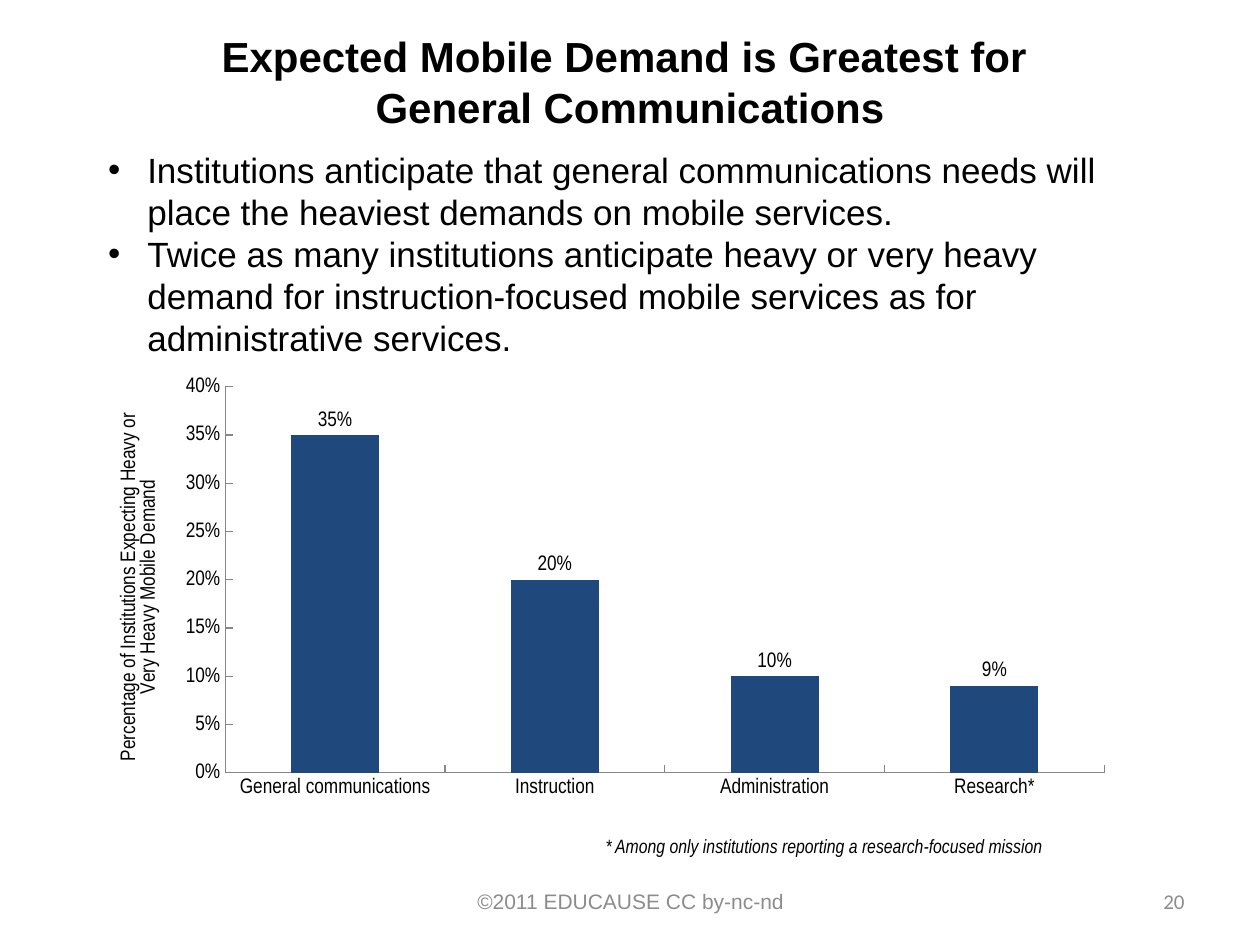
"""Build the slide on expected mobile demand with its column chart."""
from dataclasses import dataclass
from typing import Any

from lxml.etree import SubElement
from pptx import Presentation
from pptx.chart.data import CategoryChartData
from pptx.dml.color import RGBColor
from pptx.enum.chart import XL_CHART_TYPE, XL_LABEL_POSITION, XL_TICK_MARK
from pptx.enum.text import MSO_ANCHOR, PP_ALIGN
from pptx.oxml import parse_xml
from pptx.oxml.ns import nsdecls, qn
from pptx.util import Cm, Pt


@dataclass(frozen=True)
class Theme:
    """Colours, fonts and type sizes of the slide."""

    black: RGBColor = RGBColor(0, 0, 0)
    grey: RGBColor = RGBColor(0x8C, 0x8C, 0x8C)
    axis: RGBColor = RGBColor(0x86, 0x86, 0x86)
    navy: RGBColor = RGBColor(0x1F, 0x49, 0x7D)
    sans: str = "Arial"
    narrow: str = "Arial Narrow"
    number: str = "Calibri"
    title: Pt = Pt(24)
    body: Pt = Pt(20)
    small: Pt = Pt(12)
    note: Pt = Pt(11)


@dataclass(frozen=True)
class Box:
    """Position and size in centimetres."""

    left: float
    top: float
    width: float
    height: float

    def lengths(self) -> tuple[Cm, ...]:
        """Return the four values as lengths."""
        return tuple(Cm(value) for value in (self.left, self.top, self.width, self.height))


@dataclass(frozen=True)
class TextBlock:
    """A text box with one format for all its paragraphs."""

    box: Box
    paragraphs: tuple[str, ...]
    font: dict[str, Any]
    color: RGBColor
    align: PP_ALIGN = PP_ALIGN.LEFT
    anchor: MSO_ANCHOR = MSO_ANCHOR.TOP
    bulleted: bool = False


THEME = Theme()
BULLET_INDENT = Cm(0.79)
TEXT_BLOCKS = (
    TextBlock(Box(1.27, 0.46, 22.86, 2.36),
              ("Expected Mobile Demand is Greatest for \vGeneral Communications",),
              {"name": THEME.sans, "size": THEME.title, "bold": True},
              THEME.black, PP_ALIGN.CENTER, MSO_ANCHOR.MIDDLE),
    TextBlock(Box(8.69, 17.65, 8.05, 1.02), ("©2011 EDUCAUSE CC by-nc-nd",),
              {"name": THEME.sans, "size": THEME.small},
              THEME.grey, PP_ALIGN.CENTER, MSO_ANCHOR.MIDDLE),
    TextBlock(Box(18.21, 17.65, 5.92, 1.02), ("20",),
              {"name": THEME.number, "size": THEME.small},
              THEME.grey, PP_ALIGN.RIGHT, MSO_ANCHOR.MIDDLE),
    TextBlock(Box(1.93, 2.87, 20.75, 4.52),
              ("Institutions anticipate that general communications needs will place "
               "the heaviest demands on mobile services.",
               "Twice as many institutions anticipate heavy or very heavy demand for "
               "instruction-focused mobile services as for administrative services."),
              {"name": THEME.sans, "size": THEME.body}, THEME.black, bulleted=True),
    TextBlock(Box(11.96, 16.69, 10.19, 0.74),
              ("* Among only institutions reporting a research-focused mission",),
              {"name": THEME.narrow, "size": THEME.note, "italic": True}, THEME.black),
)
CHART_BOX = Box(1.83, 7.39, 20.85, 9.02)
PLOT_AREA = {"x": 0.13, "y": 0.045, "w": 0.85, "h": 0.863}
DEMAND = {"General communications": 0.35, "Instruction": 0.2,
          "Administration": 0.1, "Research*": 0.09}
AXIS_TITLE = "Percentage of Institutions Expecting Heavy or Very Heavy Mobile Demand"
PERCENT = "0%"


def apply_format(target: Any, values: dict[str, Any]) -> None:
    """Set each named attribute of the target."""
    for name, value in values.items():
        setattr(target, name, value)


def apply_font(font: Any, values: dict[str, Any], color: RGBColor) -> None:
    """Set font attributes and colour."""
    apply_format(font, values)
    font.color.rgb = color


def add_bullet(paragraph: Any) -> None:
    """Give the paragraph a round bullet and a hanging indent."""
    properties = paragraph._p.get_or_add_pPr()
    properties.set("marL", str(BULLET_INDENT))
    properties.set("indent", str(-BULLET_INDENT))
    SubElement(properties, qn("a:buFont")).set("typeface", THEME.sans)
    SubElement(properties, qn("a:buChar")).set("char", "•")


def add_text(slide: Any, block: TextBlock) -> None:
    """Draw one text block."""
    frame = slide.shapes.add_textbox(*block.box.lengths()).text_frame
    apply_format(frame, {"word_wrap": True, "vertical_anchor": block.anchor})
    for index, text in enumerate(block.paragraphs):
        paragraph = frame.add_paragraph() if index else frame.paragraphs[0]
        paragraph.text = text
        paragraph.alignment = block.align
        if block.bulleted:
            add_bullet(paragraph)
        for run in paragraph.runs:
            apply_font(run.font, block.font, block.color)


def set_plot_layout(chart: Any) -> None:
    """Fix the inner plot area as fractions of the chart."""
    plot_area = chart._chartSpace.chart.plotArea
    for existing in plot_area.findall(qn("c:layout")):
        plot_area.remove(existing)
    modes = "".join(f'<c:{axis}Mode val="edge"/>' for axis in "xy")
    extents = "".join(f'<c:{name} val="{value}"/>' for name, value in PLOT_AREA.items())
    plot_area.insert(0, parse_xml(
        f'<c:layout {nsdecls("c")}><c:manualLayout><c:layoutTarget val="inner"/>'
        f"{modes}{extents}</c:manualLayout></c:layout>"))


def add_demand_chart(slide: Any) -> None:
    """Draw the column chart of expected demand."""
    data = CategoryChartData(number_format=PERCENT)
    data.categories = list(DEMAND)
    data.add_series("Series 1", list(DEMAND.values()))
    chart = slide.shapes.add_chart(
        XL_CHART_TYPE.COLUMN_CLUSTERED, *CHART_BOX.lengths(), data).chart
    apply_format(chart, {"has_legend": False, "has_title": False})
    chart_font = {"name": THEME.narrow, "size": THEME.small, "bold": False}
    apply_font(chart.font, chart_font, THEME.black)
    set_plot_layout(chart)

    for axis in (chart.category_axis, chart.value_axis):
        apply_format(axis, {"has_major_gridlines": False,
                            "major_tick_mark": XL_TICK_MARK.INSIDE,
                            "minor_tick_mark": XL_TICK_MARK.NONE})
        axis.format.line.color.rgb = THEME.axis
        axis.format.line.width = Pt(0.75)
    value_axis = chart.value_axis
    apply_format(value_axis, {"minimum_scale": 0, "maximum_scale": 0.4, "major_unit": 0.05})
    apply_format(value_axis.tick_labels,
                 {"number_format": PERCENT, "number_format_is_linked": False})
    title_frame = value_axis.axis_title.text_frame
    title_frame.text = AXIS_TITLE
    apply_font(title_frame.paragraphs[0].runs[0].font, chart_font, THEME.black)

    plot = chart.plots[0]
    apply_format(plot, {"gap_width": 150, "vary_by_categories": False, "has_data_labels": True})
    apply_format(plot.data_labels, {"show_value": True, "number_format": PERCENT,
                                    "number_format_is_linked": False,
                                    "position": XL_LABEL_POSITION.OUTSIDE_END})
    fill = plot.series[0].format.fill
    fill.solid()
    fill.fore_color.rgb = THEME.navy


def main() -> None:
    """Build and save the presentation."""
    presentation = Presentation()
    apply_format(presentation, {"slide_width": Cm(25.4), "slide_height": Cm(19.05)})
    slide = presentation.slides.add_slide(presentation.slide_layouts[6])
    add_demand_chart(slide)
    for block in TEXT_BLOCKS:
        add_text(slide, block)
    presentation.save("out.pptx")


if __name__ == "__main__":
    main()
